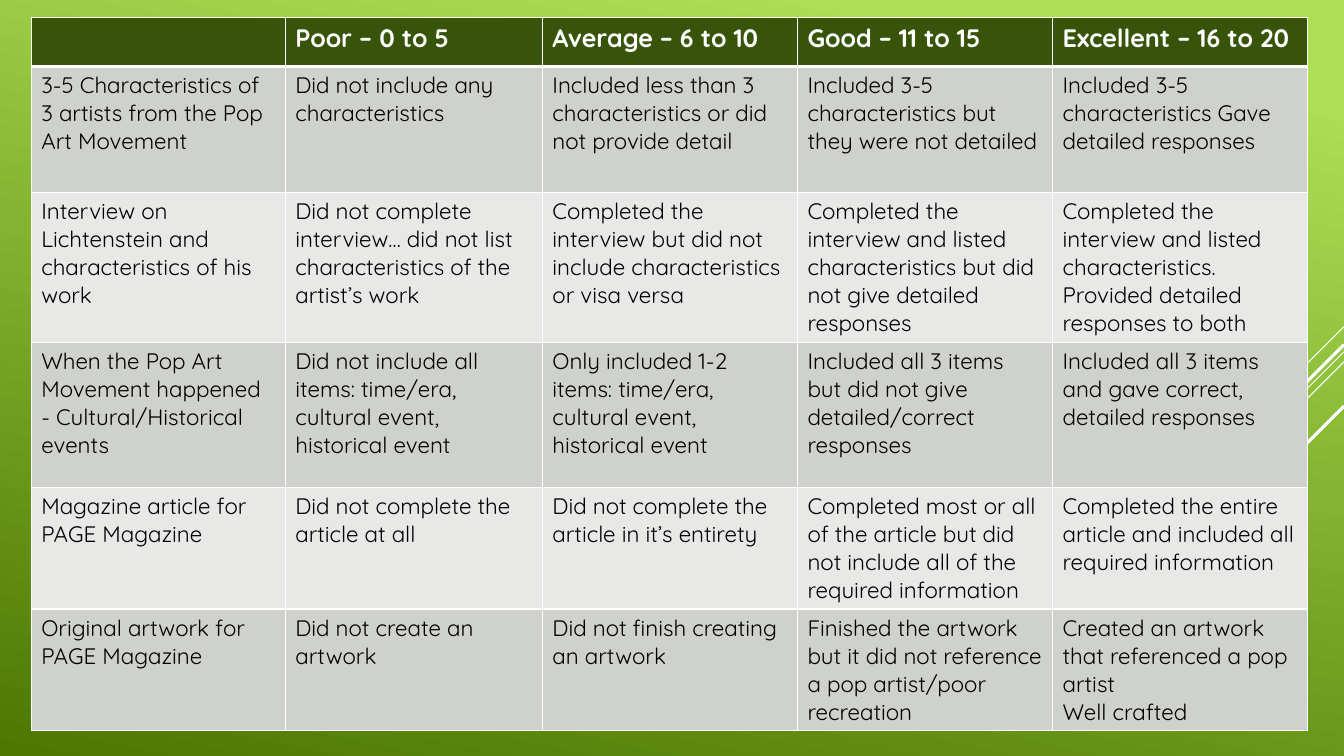
import pptx
import pptx.dml.color
import pptx.enum.shapes
import pptx.oxml.ns
import pptx.util
from lxml import etree

PX = 9144  # EMU per px, 100 px to the inch
COLORS = {
    "bg_light": "ACDF55", "bg_dark": "4C7800", "white": "FFFFFF", "black": "000000",
    "header": "38540A", "odd": "CED1CC", "even": "E8E9E7",
}
FONT = "Quicksand"
COL_WIDTHS = [252, 255, 253, 253, 253]
ROW_HEIGHTS = [49, 125, 127, 144, 109, 109]
RUBRIC = [
    ["", "Poor – 0 to 5", "Average – 6 to 10", "Good – 11 to 15", "Excellent – 16 to 20"],
    ["3-5 Characteristics of 3 artists from the Pop Art Movement",
     "Did not include any characteristics",
     "Included less than 3 characteristics or did not provide detail",
     "Included 3-5 characteristics but they were not detailed",
     "Included 3-5 characteristics Gave detailed responses"],
    ["Interview on Lichtenstein and characteristics of his work",
     "Did not complete interview… did not list characteristics of the artist’s work",
     "Completed the interview but did not include characteristics or visa versa",
     "Completed the interview and listed characteristics but did not give detailed responses",
     "Completed the interview and listed characteristics. Provided detailed responses to both"],
    ["When the Pop Art Movement happened - Cultural/Historical events",
     "Did not include all items: time/era, cultural event, historical event",
     "Only included 1-2 items: time/era, cultural event, historical event",
     "Included all 3 items but did not give detailed/correct responses",
     "Included all 3 items and gave correct, detailed responses"],
    ["Magazine article for PAGE Magazine",
     "Did not complete the article at all",
     "Did not complete the article in it’s entirety",
     "Completed most or all of the article but did not include all of the required information",
     "Completed the entire article and included all required information"],
    ["Original artwork for PAGE Magazine",
     "Did not create an artwork",
     "Did not finish creating an artwork",
     "Finished the artwork but it did not reference a pop artist/poor recreation",
     "Created an artwork that referenced a pop artist\nWell crafted"],
]


def px(n):
    return pptx.util.Emu(n * PX)


def rgb(name):
    return pptx.dml.color.RGBColor.from_string(COLORS[name])


def paint_background(s):
    fill = s.background.fill
    fill.gradient()
    fill.gradient_angle = 258
    for stop, position, color in zip(fill.gradient_stops, (0.1, 1), ("bg_light", "bg_dark")):
        stop.position = position
        stop.color.rgb = rgb(color)


def add_rays(s, right, top):
    """Diagonal lines running down and left from the right edge."""
    # offset from top, run, line width in points
    for offset, run, width in [(0, 100, 0.75), (25, 326, 0.75), (35, 207, 0.75),
                               (18, 191, 2.25), (79, 139, 2.25)]:
        y = top + offset
        ray = s.shapes.add_connector(pptx.enum.shapes.MSO_CONNECTOR.STRAIGHT,
                                     px(right), px(y), px(right - run), px(y + run))
        ray.line.color.rgb = rgb("white")
        ray.line.width = pptx.util.Pt(width)
        etree.SubElement(ray._element.spPr, pptx.oxml.ns.qn("a:effectLst"))


def set_borders(cell, **widths):
    tc_pr = cell._tc.get_or_add_tcPr()
    for side in ("L", "R", "T", "B"):
        ln = etree.SubElement(tc_pr, pptx.oxml.ns.qn(f"a:ln{side}"),
                              w=str(pptx.util.Pt(widths.get(side, 1))))
        fill = etree.SubElement(ln, pptx.oxml.ns.qn("a:solidFill"))
        etree.SubElement(fill, pptx.oxml.ns.qn("a:srgbClr"), val=COLORS["white"])


def fill_cell(cell, text, row):
    header = row == 0
    # Borders come before the fill in the cell properties
    set_borders(cell, **({"B": 3} if header else {"T": 3} if row == 1 else {}))
    cell.fill.solid()
    cell.fill.fore_color.rgb = rgb("header" if header else "odd" if row % 2 else "even")
    tf = cell.text_frame
    for i, line in enumerate(text.split("\n")):
        p = tf.add_paragraph() if i else tf.paragraphs[0]
        p.font.size = pptx.util.Pt(18 if header else 16)
        if not line:
            continue
        r = p.add_run()
        r.text = line
        r.font.name = FONT
        r.font.size = pptx.util.Pt(18 if header else 16)
        r.font.bold = header
        r.font.color.rgb = rgb("white" if header else "black")


def add_rubric(s, left, top):
    table = s.shapes.add_table(len(ROW_HEIGHTS), len(COL_WIDTHS), px(left), px(top),
                               px(sum(COL_WIDTHS)), px(sum(ROW_HEIGHTS))).table
    for column, width in zip(table.columns, COL_WIDTHS):
        column.width = px(width)
    for i, (row, height) in enumerate(zip(table.rows, ROW_HEIGHTS)):
        row.height = px(height)
        for cell, text in zip(row.cells, RUBRIC[i]):
            fill_cell(cell, text, i)


def main():
    prs = pptx.Presentation()
    prs.slide_width, prs.slide_height = px(1333), px(750)
    s = prs.slides.add_slide(prs.slide_layouts[6])
    paint_background(s)
    add_rays(s, 1333, 324)
    add_rubric(s, 31, 17)
    prs.save("out.pptx")


if __name__ == "__main__":
    main()
